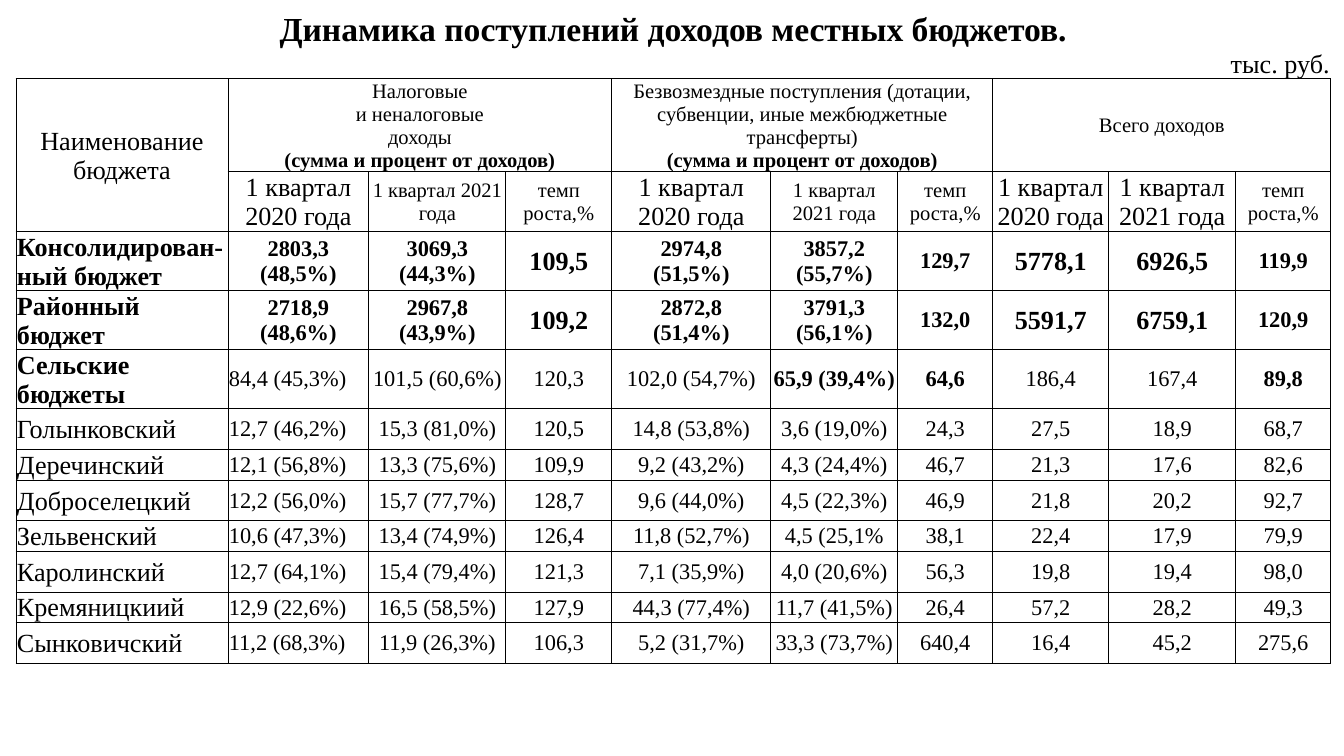
import dataclasses

import lxml.etree
import pptx
import pptx.dml.color
import pptx.enum.text
import pptx.oxml.ns
import pptx.util

PX = 914400 / 134.4
ALIGN = pptx.enum.text.PP_ALIGN
ANCHOR = pptx.enum.text.MSO_ANCHOR
NO_STYLE = "{2D5ABB26-0587-4C30-8999-92F81FD0307C}"


@dataclasses.dataclass(frozen=True)
class Theme:
    font: str = "Times New Roman"
    ink: str = "000000"
    title: int = 18
    large: int = 14
    figure: int = 12
    small: int = 11
    border: float = 0.5


THEME = Theme()

COLUMN_WIDTHS = [212, 141, 137, 106, 159, 127, 95, 116, 127, 95]
ROW_HEIGHTS = [45, 28, 93, 60, 59, 59, 59, 41, 31, 40, 31, 41, 30, 41]
HEADER_ROW, PERIOD_ROW, FIRST_BUDGET_ROW = 2, 3, 4

SHARE_NOTE = "(сумма и процент от доходов)"
INCOME_GROUPS = [
    f"Налоговые\nи неналоговые\nдоходы\n{SHARE_NOTE}",
    "Безвозмездные поступления (дотации, субвенции, иные межбюджетные "
    f"трансферты)\n{SHARE_NOTE}",
    "Всего доходов",
]
PERIODS = ["1 квартал 2020 года", "1 квартал 2021 года", "темп\nроста,%"]
LARGE_PERIOD_COLUMNS = {1, 4, 7, 8}
LARGE_FIGURE_COLUMNS = {3, 7, 8}

TOTAL_BUDGETS = ["Консолидирован-ный бюджет", "Районный бюджет"]
RURAL_TOTAL = "Сельские бюджеты"
RURAL_BOLD_COLUMNS = {0, 5, 6, 9}
BUDGETS = [
    (TOTAL_BUDGETS[0], "2803,3\n(48,5%)", "3069,3\n(44,3%)", "109,5",
     "2974,8\n(51,5%)", "3857,2\n(55,7%)", "129,7", "5778,1", "6926,5", "119,9"),
    (TOTAL_BUDGETS[1], "2718,9\n(48,6%)", "2967,8\n(43,9%)", "109,2",
     "2872,8\n(51,4%)", "3791,3\n(56,1%)", "132,0", "5591,7", "6759,1", "120,9"),
    (RURAL_TOTAL, "84,4 (45,3%)", "101,5 (60,6%)", "120,3",
     "102,0 (54,7%)", "65,9 (39,4%)", "64,6", "186,4", "167,4", "89,8"),
    ("Голынковский", "12,7 (46,2%)", "15,3 (81,0%)", "120,5",
     "14,8 (53,8%)", "3,6 (19,0%)", "24,3", "27,5", "18,9", "68,7"),
    ("Деречинский", "12,1 (56,8%)", "13,3 (75,6%)", "109,9",
     "9,2 (43,2%)", "4,3 (24,4%)", "46,7", "21,3", "17,6", "82,6"),
    ("Доброселецкий", "12,2 (56,0%)", "15,7 (77,7%)", "128,7",
     "9,6 (44,0%)", "4,5 (22,3%)", "46,9", "21,8", "20,2", "92,7"),
    ("Зельвенский", "10,6 (47,3%)", "13,4 (74,9%)", "126,4",
     "11,8 (52,7%)", "4,5 (25,1%", "38,1", "22,4", "17,9", "79,9"),
    ("Каролинский", "12,7 (64,1%)", "15,4 (79,4%)", "121,3",
     "7,1 (35,9%)", "4,0 (20,6%)", "56,3", "19,8", "19,4", "98,0"),
    ("Кремяницкиий", "12,9 (22,6%)", "16,5 (58,5%)", "127,9",
     "44,3 (77,4%)", "11,7 (41,5%)", "26,4", "57,2", "28,2", "49,3"),
    ("Сынковичский", "11,2 (68,3%)", "11,9 (26,3%)", "106,3",
     "5,2 (31,7%)", "33,3 (73,7%)", "640,4", "16,4", "45,2", "275,6"),
]


def px(length):
    return pptx.util.Emu(round(length * PX))


def set_borders(cell, sides):
    properties = cell._tc.get_or_add_tcPr()
    for side in sides:
        line = lxml.etree.SubElement(properties, pptx.oxml.ns.qn(f"a:ln{side}"))
        line.set("w", str(pptx.util.Pt(THEME.border)))
        fill = lxml.etree.SubElement(line, pptx.oxml.ns.qn("a:solidFill"))
        color = lxml.etree.SubElement(fill, pptx.oxml.ns.qn("a:srgbClr"))
        color.set("val", THEME.ink)


def write_cell(cell, text, size, bold=False, align=ALIGN.CENTER,
               anchor=ANCHOR.MIDDLE, bottom=0):
    cell.margin_left = cell.margin_right = cell.margin_top = px(1)
    cell.margin_bottom = px(bottom)
    cell.vertical_anchor = anchor
    cell.text_frame.text = text
    for paragraph in cell.text_frame.paragraphs:
        paragraph.alignment = align
        for run in paragraph.runs:
            run.font.name = THEME.font
            run.font.size = pptx.util.Pt(size)
            run.font.bold = bold or run.text == SHARE_NOTE
            run.font.color.rgb = pptx.dml.color.RGBColor.from_string(THEME.ink)


def add_grid(slide):
    frame = slide.shapes.add_table(
        len(ROW_HEIGHTS), len(COLUMN_WIDTHS), px(16), px(4),
        px(sum(COLUMN_WIDTHS)), px(sum(ROW_HEIGHTS)))
    table = frame.table
    table.first_row = table.horz_banding = False
    table._tbl.tblPr.find(pptx.oxml.ns.qn("a:tableStyleId")).text = NO_STYLE
    for column, width in zip(table.columns, COLUMN_WIDTHS):
        column.width = px(width)
    for index, (row, height) in enumerate(zip(table.rows, ROW_HEIGHTS)):
        row.height = px(height)
        sides = "LRTB" if index >= HEADER_ROW else "B" * index
        for cell in row.cells:
            set_borders(cell, sides)
            cell.fill.background()
    return table


def write_heading(table):
    last = len(COLUMN_WIDTHS) - 1
    for row in range(HEADER_ROW):
        table.cell(row, 0).merge(table.cell(row, last))
    write_cell(table.cell(0, 0), "Динамика поступлений доходов местных бюджетов.",
               THEME.title, bold=True, anchor=ANCHOR.BOTTOM)
    write_cell(table.cell(1, 0), "тыс. руб.", THEME.large,
               align=ALIGN.RIGHT, anchor=ANCHOR.BOTTOM)


def write_column_headers(table):
    table.cell(HEADER_ROW, 0).merge(table.cell(PERIOD_ROW, 0))
    write_cell(table.cell(HEADER_ROW, 0), "Наименование бюджета", THEME.large)
    for group, label in enumerate(INCOME_GROUPS):
        first = 1 + group * len(PERIODS)
        header = table.cell(HEADER_ROW, first)
        header.merge(table.cell(HEADER_ROW, first + len(PERIODS) - 1))
        write_cell(header, label, THEME.small)
        for column, period in enumerate(PERIODS, first):
            size = THEME.large if column in LARGE_PERIOD_COLUMNS else THEME.small
            write_cell(table.cell(PERIOD_ROW, column), period, size)


def write_budget(table, row, budget):
    name = budget[0]
    is_total = name in TOTAL_BUDGETS
    for column, value in enumerate(budget):
        is_large = column == 0 or is_total and column in LARGE_FIGURE_COLUMNS
        is_left = column == 0 or column == 1 and not is_total
        write_cell(
            table.cell(row, column), value,
            THEME.large if is_large else THEME.figure,
            bold=is_total or name == RURAL_TOTAL and column in RURAL_BOLD_COLUMNS,
            align=ALIGN.LEFT if is_left else ALIGN.CENTER,
            bottom=0 if column == 0 else 1)


def main():
    """Build the slide with the table of local budget revenues."""
    presentation = pptx.Presentation()
    presentation.slide_width, presentation.slide_height = px(1344), px(756)
    slide = presentation.slides.add_slide(presentation.slide_layouts[6])
    table = add_grid(slide)
    write_heading(table)
    write_column_headers(table)
    for row, budget in enumerate(BUDGETS, FIRST_BUDGET_ROW):
        write_budget(table, row, budget)
    presentation.save("out.pptx")


if __name__ == "__main__":
    main()
